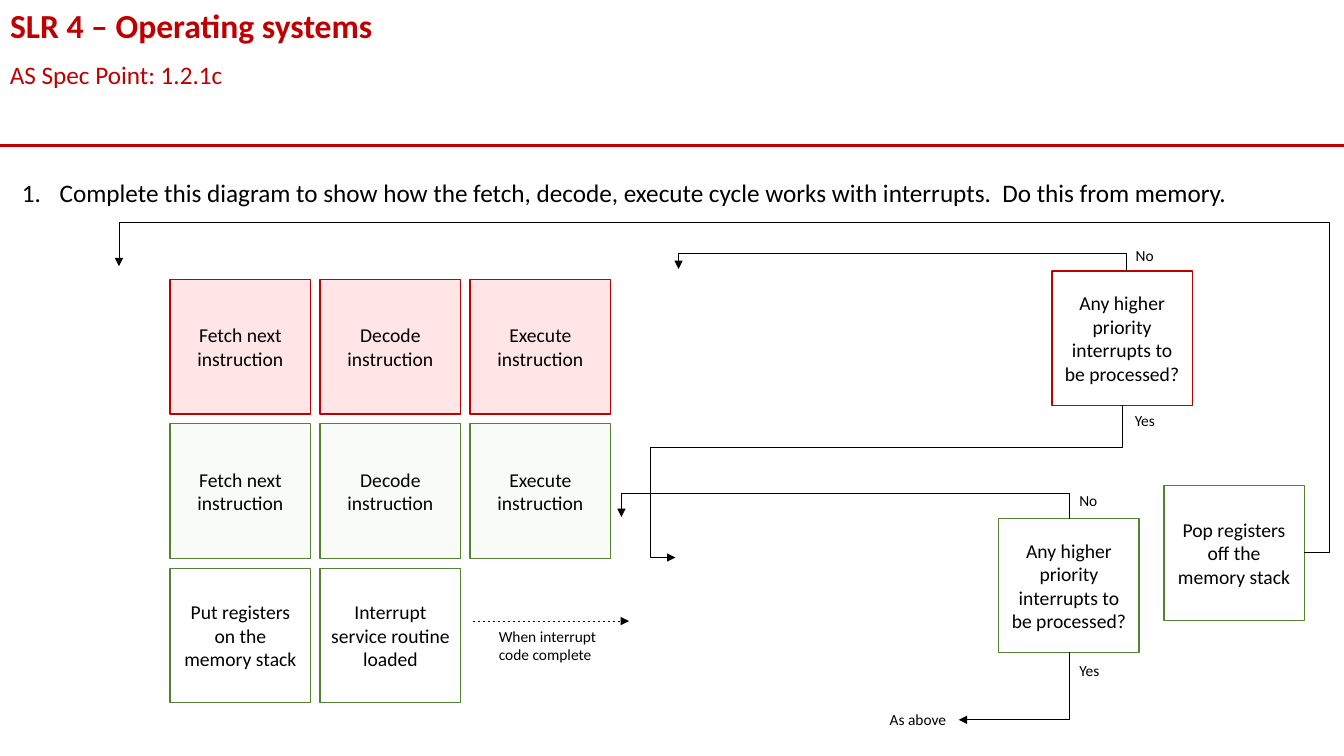
"""Build a worksheet slide on the fetch, decode, execute cycle with interrupts."""
from lxml import etree
from pptx import Presentation
from pptx.dml.color import RGBColor
from pptx.enum.dml import MSO_LINE
from pptx.enum.shapes import MSO_CONNECTOR, MSO_SHAPE
from pptx.enum.text import MSO_ANCHOR, MSO_AUTO_SIZE, PP_ALIGN
from pptx.oxml.ns import qn
from pptx.util import Cm, Pt

RED = RGBColor(0xC0, 0x00, 0x00)
GREEN = RGBColor(0x54, 0x82, 0x35)
RED_TINT = RGBColor(0xFF, 0x00, 0x00)
GREEN_TINT = RGBColor(0xC5, 0xE0, 0xB4)
BLACK = RGBColor(0x00, 0x00, 0x00)
LEFT, CENTER = PP_ALIGN.LEFT, PP_ALIGN.CENTER
TOP, MIDDLE = MSO_ANCHOR.TOP, MSO_ANCHOR.MIDDLE
NO_AUTOFIT = MSO_AUTO_SIZE.NONE
STRAIGHT, ELBOW = MSO_CONNECTOR.STRAIGHT, MSO_CONNECTOR.ELBOW
RECTANGLE, DASH = MSO_SHAPE.RECTANGLE, MSO_LINE.DASH

SLIDE_W, SLIDE_H = 33.87, 19.05
BOX_W, BOX_H = 3.54, 3.39
GRID_X, GRID_Y = 4.29, 7.04
PITCH_X, PITCH_Y = 3.78, 3.64


class Worksheet:
    """Hold the style and the current slide, and draw each kind of element."""

    def __init__(self, slide, font="Calibri"):
        self.slide = slide
        self.shapes = slide.shapes
        self.font = font

    def add_text(self, shape, text, size, color=BLACK, bold=False, align=LEFT,
                 anchor=TOP, wrap=True):
        frame = shape.text_frame
        frame.auto_size = NO_AUTOFIT
        frame.word_wrap = wrap
        frame.vertical_anchor = anchor
        paragraph = frame.paragraphs[0]
        paragraph.alignment = align
        paragraph.space_before = Pt(0)
        run = paragraph.add_run()
        run.text = text
        run.font.name = self.font
        run.font.size = Pt(size)
        run.font.bold = bold
        run.font.color.rgb = color
        return paragraph

    def place(self, shape, left, top, width, height):
        shape.left, shape.top = Cm(left), Cm(top)
        shape.width, shape.height = Cm(width), Cm(height)

    def title(self, text):
        heading = self.shapes.title
        self.place(heading, 0, 0, SLIDE_W, 1.28)
        self.add_text(heading, text, 24, RED, bold=True)

    def question(self, text):
        body = self.slide.placeholders[1]
        self.place(body, 0.3, 4.34, 31.12, 1.03)
        paragraph = self.add_text(body, text, 18, wrap=False)
        properties = paragraph._p.get_or_add_pPr()
        properties.set("marL", str(Cm(0.95)))
        properties.set("indent", str(Cm(-0.95)))
        etree.SubElement(properties, qn("a:buFont"), typeface="+mj-lt")
        etree.SubElement(properties, qn("a:buAutoNum"), type="arabicPeriod")

    def label(self, text, left, top, width, height=0.73, size=11, color=BLACK, wrap=False):
        caption = self.shapes.add_textbox(Cm(left), Cm(top), Cm(width), Cm(height))
        self.add_text(caption, text, size, color, wrap=wrap)

    def step(self, text, left, top, border, tint=None):
        box = self.shapes.add_shape(RECTANGLE, Cm(left), Cm(top), Cm(BOX_W), Cm(BOX_H))
        box.shadow.inherit = False
        box.line.color.rgb = border
        box.line.width = Pt(1)
        if tint is None:
            box.fill.background()
        else:
            box.fill.solid()
            box.fill.fore_color.rgb = tint
            tint_color = box.element.spPr.find(qn("a:solidFill"))[0]
            etree.SubElement(tint_color, qn("a:alpha"), val="10000")
        self.add_text(box, text, 14, align=CENTER, anchor=MIDDLE)

    def finish_line(self, connector, color, width, dash=None, arrow=True):
        connector.line.color.rgb = color
        connector.line.width = Pt(width)
        if dash:
            connector.line.dash_style = dash
        properties = connector.element.spPr
        if arrow:
            etree.SubElement(properties.find(qn("a:ln")), qn("a:tailEnd"), type="triangle")
        etree.SubElement(properties, qn("a:effectLst"))

    def straight(self, start, end, color=BLACK, width=0.5, dash=None, arrow=True):
        ends = [Cm(value) for value in (*start, *end)]
        connector = self.shapes.add_connector(STRAIGHT, *ends)
        self.finish_line(connector, color, width, dash, arrow)

    def elbow(self, start, end, turns, vertical=True):
        """Draw a bent arrow whose turns alternate axes, the starting axis first."""
        dx, dy = end[0] - start[0], end[1] - start[1]
        width, height = (abs(dy), abs(dx)) if vertical else (abs(dx), abs(dy))
        center_x, center_y = (start[0] + end[0]) / 2, (start[1] + end[1]) / 2
        connector = self.shapes.add_connector(ELBOW, 0, 0, 0, 0)
        self.place(connector, center_x - width / 2, center_y - height / 2, width, height)
        frame = connector.element.spPr.find(qn("a:xfrm"))
        if vertical:
            frame.set("rot", str((90 if dy > 0 else 270) * 60000))
            flip_h, flip_v = False, (dx > 0) == (dy > 0)
        else:
            flip_h, flip_v = dx < 0, dy < 0
        frame.set("flipH", str(int(flip_h)))
        frame.set("flipV", str(int(flip_v)))
        geometry = connector.element.spPr.find(qn("a:prstGeom"))
        geometry.set("prst", f"bentConnector{len(turns) + 2}")
        guides = geometry.find(qn("a:avLst"))
        for index, turn in enumerate(turns):
            axis = (index + vertical) % 2
            share = (turn - start[axis]) / (end[axis] - start[axis])
            etree.SubElement(guides, qn("a:gd"), name=f"adj{index + 1}",
                             fmla=f"val {round(share * 100000)}")
        self.finish_line(connector, BLACK, 0.5)


def main():
    deck = Presentation()
    deck.slide_width, deck.slide_height = Cm(SLIDE_W), Cm(SLIDE_H)
    sheet = Worksheet(deck.slides.add_slide(deck.slide_layouts[1]))

    sheet.straight((0, 3.66), (SLIDE_W, 3.66), RED, 2.25, arrow=False)
    sheet.label("AS Spec Point: 1.2.1c", 0, 1.36, SLIDE_W, 1.03, 18, RED, wrap=True)
    sheet.title("SLR 4 – Operating systems")
    sheet.question("Complete this diagram to show how the fetch, decode, execute cycle "
                   "works with interrupts.  Do this from memory.")

    cycle = ["Fetch next instruction", "Decode instruction", "Execute instruction"]
    interrupt = ["Put registers on the memory stack", "Interrupt service routine loaded"]
    rows = [(cycle, RED, RED_TINT), (cycle, GREEN, GREEN_TINT), (interrupt, GREEN, None)]
    for row, (steps, border, tint) in enumerate(rows):
        for column, text in enumerate(steps):
            sheet.step(text, GRID_X + column * PITCH_X, GRID_Y + row * PITCH_Y, border, tint)

    priority_check = "Any higher priority interrupts to be processed?"
    sheet.step(priority_check, 26.51, 6.83, RED)
    sheet.step(priority_check, 25.17, 13.06, GREEN)
    sheet.step("Pop registers off the memory stack", 29.33, 12.24, GREEN)

    sheet.elbow((28.28, 10.21), (17.02, 14.05), [11.28, 16.4])
    sheet.elbow((28.39, 6.83), (17.1, 6.78), [6.38])
    sheet.elbow((26.95, 13.08), (15.66, 13.03), [12.44])
    sheet.elbow((26.95, 16.43), (24.16, 18.14), [])
    sheet.elbow((32.87, 13.92), (3, 6.71), [33.49, 5.59], vertical=False)
    sheet.straight((11.91, 15.65), (15.85, 15.65), dash=DASH)

    sheet.label("No", 28.37, 6.07, 0.97)
    sheet.label("Yes", 28.35, 10.24, 1.04)
    sheet.label("No", 26.95, 12.24, 0.97)
    sheet.label("Yes", 26.95, 16.54, 1.04)
    sheet.label("As above", 22.17, 17.78, 1.96)
    sheet.label("When interrupt code complete", 12.32, 15.67, 3.56, 1.19, wrap=True)

    deck.save("out.pptx")


if __name__ == "__main__":
    main()
